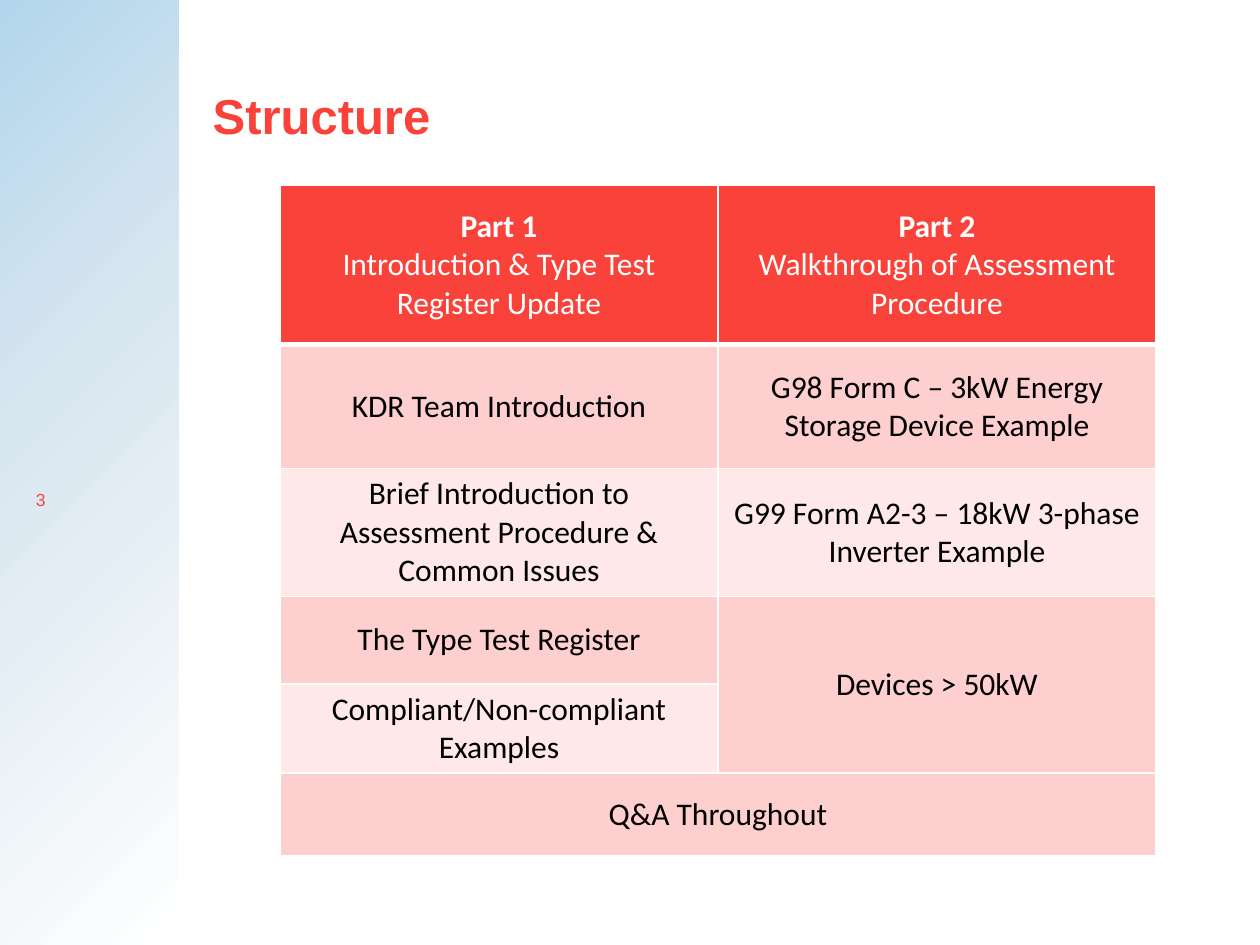
from lxml import etree
from pptx import Presentation
from pptx.dml.color import RGBColor
from pptx.enum.shapes import MSO_SHAPE
from pptx.enum.text import MSO_ANCHOR, PP_ALIGN
from pptx.oxml import parse_xml
from pptx.oxml.ns import nsdecls, qn
from pptx.util import Pt

RECT = MSO_SHAPE.RECTANGLE
TOP, MIDDLE = MSO_ANCHOR.TOP, MSO_ANCHOR.MIDDLE
CENTER = PP_ALIGN.CENTER

COLORS = {
    "white": "FFFFFF", "black": "000000",
    "title": "F9423A", "number": "FF4337",
    "header": "F9423A", "band_dark": "FDCFCE", "band_light": "FEE9E8",
}
SIDEBAR_STOPS = [(0, "B3D6EC"), (39, "D8E6F0"), (100, "FFFFFF")]

ROW_HEIGHTS = [91, 71, 73, 50, 51, 47.5]
ROWS = [
    ["Part 1\nIntroduction & Type Test Register Update",
     "Part 2\nWalkthrough of Assessment Procedure"],
    ["KDR Team Introduction", "G98 Form C – 3kW Energy Storage Device Example"],
    ["Brief Introduction to Assessment Procedure & Common Issues",
     "G99 Form A2-3 – 18kW 3-phase Inverter Example"],
    ["The Type Test Register", "Devices > 50kW"],
    ["Compliant/Non-compliant Examples", None],
    ["Q&A Throughout", None],
]


def rgb(name):
    return RGBColor.from_string(COLORS[name])


def set_font(p, name, size, color, bold=False):
    p.font.name, p.font.size, p.font.bold = name, Pt(size), bold
    p.font.color.rgb = rgb(color)


def add_sidebar(s, x, y, w, h):
    sp = s.shapes.add_shape(RECT, Pt(x), Pt(y), Pt(w), Pt(h))
    sp.shadow.inherit = False
    sp.line.fill.background()
    sp.fill.background()
    stops = "".join(
        f'<a:gs pos="{pos * 1000}"><a:srgbClr val="{color}"/></a:gs>'
        for pos, color in SIDEBAR_STOPS)
    gradient = parse_xml(
        f'<a:gradFill {nsdecls("a")} rotWithShape="1"><a:gsLst>{stops}</a:gsLst>'
        '<a:path path="circle"><a:fillToRect r="100000" b="100000"/></a:path>'
        '</a:gradFill>')
    spPr = sp._element.spPr
    spPr.replace(spPr.find(qn("a:noFill")), gradient)


def add_text(s, text, x, y, w, h, size, color, bold=False, anchor=TOP, spacing=1.0):
    tf = s.shapes.add_textbox(Pt(x), Pt(y), Pt(w), Pt(h)).text_frame
    tf.word_wrap = True
    tf.vertical_anchor = anchor
    p = tf.paragraphs[0]
    p.text = text
    p.line_spacing = spacing
    set_font(p, "Arial", size, color, bold)


def set_borders(cell, bottom):
    tcPr = cell._tc.get_or_add_tcPr()
    for side, width in zip("LRTB", (1, 1, 1, bottom)):
        ln = etree.SubElement(tcPr, qn(f"a:ln{side}"), w=str(Pt(width)))
        fill = etree.SubElement(ln, qn("a:solidFill"))
        etree.SubElement(fill, qn("a:srgbClr"), val=COLORS["white"])


def fill_cell(cell, text, row):
    is_header = row == 0
    set_borders(cell, 3 if is_header else 1)
    cell.fill.solid()
    cell.fill.fore_color.rgb = rgb(
        "header" if is_header else "band_dark" if row % 2 else "band_light")
    cell.vertical_anchor = MIDDLE
    if text is None:
        return
    cell.text = text
    for i, p in enumerate(cell.text_frame.paragraphs):
        p.alignment = CENTER
        set_font(p, "Calibri", 18, "white" if is_header else "black",
                 bold=is_header and i == 0)


def add_structure_table(s, x, y, w):
    table = s.shapes.add_table(len(ROWS), 2, Pt(x), Pt(y), Pt(w),
                               Pt(sum(ROW_HEIGHTS))).table
    for column in table.columns:
        column.width = Pt(w / 2)
    for r, texts in enumerate(ROWS):
        table.rows[r].height = Pt(ROW_HEIGHTS[r])
        for c, text in enumerate(texts):
            fill_cell(table.cell(r, c), text, r)
    table.cell(3, 1).merge(table.cell(4, 1))
    table.cell(5, 0).merge(table.cell(5, 1))


def main():
    prs = Presentation()
    prs.slide_width, prs.slide_height = Pt(720), Pt(540)
    s = prs.slides.add_slide(prs.slide_layouts[6])
    add_sidebar(s, 0, 0, 102.3, 540.5)
    add_text(s, "3", 13.5, 273, 83, 25, 10, "number", anchor=MIDDLE)
    add_text(s, "Structure", 114.5, 49, 518.5, 90.5, 28, "title",
             bold=True, spacing=0.9)
    add_structure_table(s, 160, 105.8, 500.6)
    prs.save("out.pptx")


if __name__ == "__main__":
    main()
